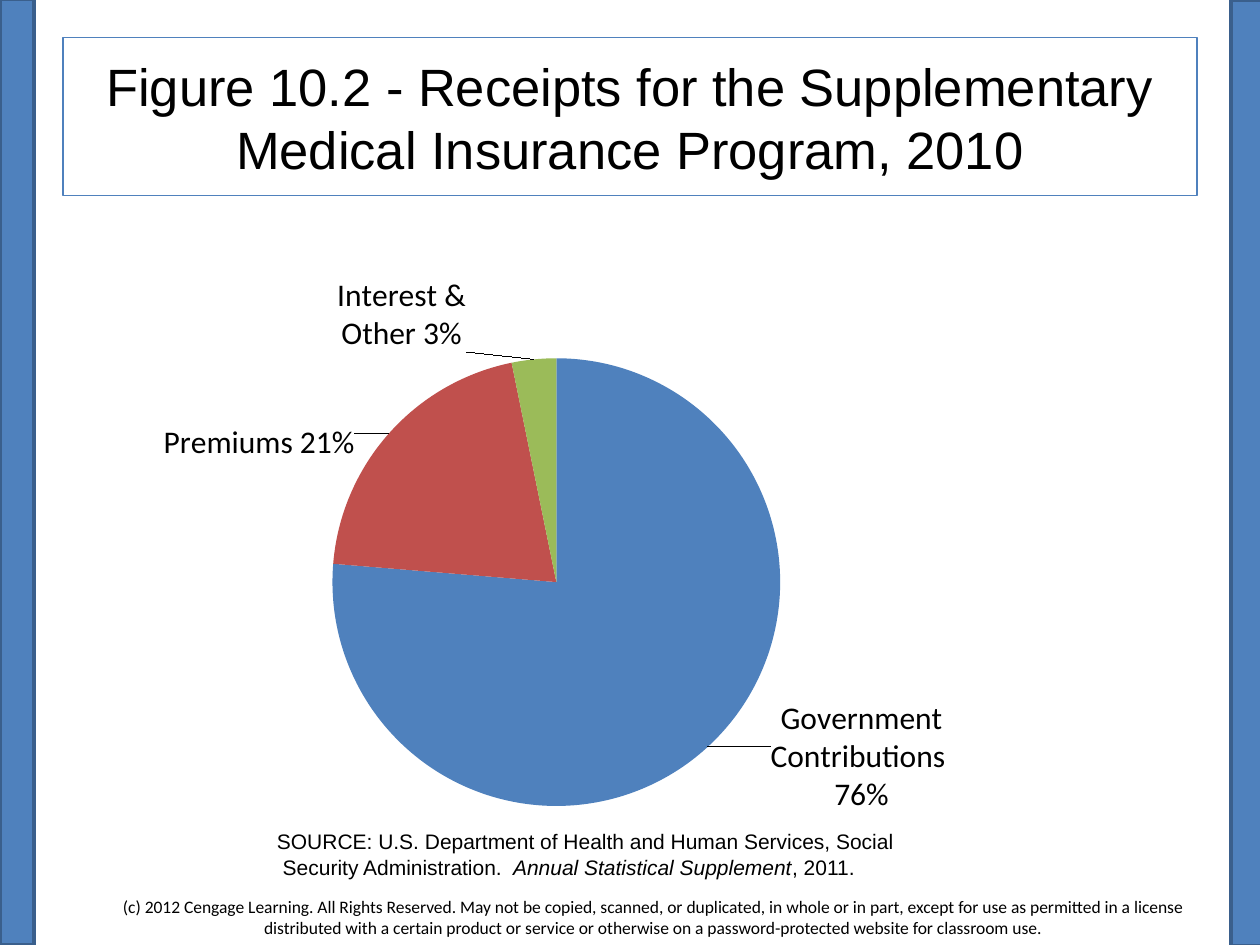
from lxml import etree
from pptx import Presentation
from pptx.chart.data import CategoryChartData
from pptx.dml.color import RGBColor
from pptx.enum.chart import XL_CHART_TYPE, XL_LABEL_POSITION
from pptx.enum.shapes import MSO_SHAPE
from pptx.enum.text import MSO_ANCHOR, PP_ALIGN
from pptx.oxml.ns import qn
from pptx.util import Inches, Pt

PIE = XL_CHART_TYPE.PIE
OUTSIDE_END = XL_LABEL_POSITION.OUTSIDE_END
RECTANGLE = MSO_SHAPE.RECTANGLE
LEFT, CENTER = PP_ALIGN.LEFT, PP_ALIGN.CENTER
TOP, MIDDLE = MSO_ANCHOR.TOP, MSO_ANCHOR.MIDDLE

COLORS = {
    "text": "000000",
    "blue": "4F81BD",
    "edge": "3A5F8C",
    "red": "C0504D",
    "green": "9BBB59",
}

# Category, share, slice colour, label, label offset (fractions of the chart)
RECEIPTS = [
    ("Government contributions", 0.763, "blue",
     "Government\nContributions \n76%", (0.06, -0.08)),
    ("Premiums", 0.205, "red", "Premiums 21%", (-0.03, 0.05)),
    ("Interest & Other", 0.032, "green", "Interest & Other 3%", (-0.07, 0)),
]


def rgb(name):
    return RGBColor.from_string(COLORS[name])


def style_font(font, size, name):
    font.size = Pt(size)
    font.name = name
    font.color.rgb = rgb("text")


def add_box(slide, box, fill=None, line="blue", width=0.75):
    shape = slide.shapes.add_shape(RECTANGLE, *map(Inches, box))
    shape.shadow.inherit = False
    if fill:
        shape.fill.solid()
        shape.fill.fore_color.rgb = rgb(fill)
    else:
        shape.fill.background()
    shape.line.color.rgb = rgb(line)
    shape.line.width = Pt(width)
    return shape


def write_text(shape, lines, size, font="Arial", align=LEFT, anchor=TOP,
               wrap=True):
    """Write lines of (text, italic) runs, one paragraph per line."""
    frame = shape.text_frame
    frame.word_wrap = wrap
    frame.vertical_anchor = anchor
    for number, line in enumerate(lines):
        paragraph = frame.add_paragraph() if number else frame.paragraphs[0]
        paragraph.alignment = align
        for text, italic in line:
            run = paragraph.add_run()
            run.text = text
            run.font.italic = italic
            style_font(run.font, size, font)


def add_text(slide, box, lines, **text_format):
    write_text(slide.shapes.add_textbox(*map(Inches, box)), lines,
               **text_format)


def make_layout(**values):
    """Build a manual chart layout element."""
    layout = etree.Element(qn("c:layout"))
    manual = etree.SubElement(layout, qn("c:manualLayout"))
    for tag, value in values.items():
        etree.SubElement(manual, qn(f"c:{tag}")).set("val", str(value))
    return layout


def place_plot(chart):
    plot_area = chart.plots[0]._element.getparent()
    for old_layout in plot_area.findall(qn("c:layout")):
        plot_area.remove(old_layout)
    plot_area.insert(0, make_layout(
        layoutTarget="inner", xMode="edge", yMode="edge",
        x=0.193, y=0.201, w=0.467, h=0.707))


def label_slice(point, text, offset):
    label = point.data_label
    label.text_frame.text = text
    for paragraph in label.text_frame.paragraphs:
        for run in paragraph.runs:
            style_font(run.font, 18, "Calibri")
    label.position = OUTSIDE_END
    x, y = offset
    element = label.text_frame._txBody.getparent().getparent()
    element.find(qn("c:idx")).addnext(make_layout(x=x, y=y))


def add_receipts_pie(slide, box):
    data = CategoryChartData(number_format="0.00%")
    data.categories = [receipt[0] for receipt in RECEIPTS]
    data.add_series("Series 1", [receipt[1] for receipt in RECEIPTS])
    chart = slide.shapes.add_chart(PIE, *map(Inches, box), data).chart
    chart.has_title = False
    chart.has_legend = False
    style_font(chart.font, 10, "Calibri")
    place_plot(chart)

    plot = chart.plots[0]
    plot.vary_by_categories = True
    series = plot.series[0]
    labels = series.data_labels
    style_font(labels.font, 18, "Calibri")
    labels.number_format = "0.00%"
    labels.number_format_is_linked = False
    labels.show_value = True
    labels.show_category_name = True
    labels.position = OUTSIDE_END

    for number, (_, _, color, text, offset) in enumerate(RECEIPTS):
        point = series.points[number]
        point.format.fill.solid()
        point.format.fill.fore_color.rgb = rgb(color)
        label_slice(point, text, offset)


def main():
    prs = Presentation()
    prs.slide_width, prs.slide_height = Inches(10), Inches(7.5)
    slide = prs.slides.add_slide(prs.slide_layouts[6])

    # Side bars
    for left, top in ((0, -0.01), (9.77, 0)):
        add_box(slide, (left, top, 0.27, 7.51), fill="blue", line="edge",
                width=2)

    # Copyright line
    add_text(slide, (0.59, 7.06, 9.18, 0.44), [[(
        "(c) 2012 Cengage Learning. All Rights Reserved. May not be copied, "
        "scanned, or duplicated, in whole or in part, except for use as "
        "permitted in a license distributed with a certain product or service "
        "or otherwise on a password-protected website for classroom use.",
        False)]], size=10, font="Calibri", align=CENTER)

    # Title
    title = add_box(slide, (0.5, 0.3, 9, 1.25))
    write_text(title, [[(
        "Figure 10.2 - Receipts for the Supplementary Medical Insurance "
        "Program, 2010", False)]], size=30, align=CENTER, anchor=MIDDLE)

    # Pie chart and its source
    add_receipts_pie(slide, (1.17, 1.71, 7.61, 5.25))
    add_text(slide, (2.1, 6.53, 5.14, 0.5), [
        [("SOURCE: U.S. Department of Health and Human Services, Social",
          False)],
        [(" Security Administration. ", False),
         (" Annual Statistical Supplement", True), (", 2011.", False)],
    ], size=12, wrap=False)

    prs.save("out.pptx")


if __name__ == "__main__":
    main()
